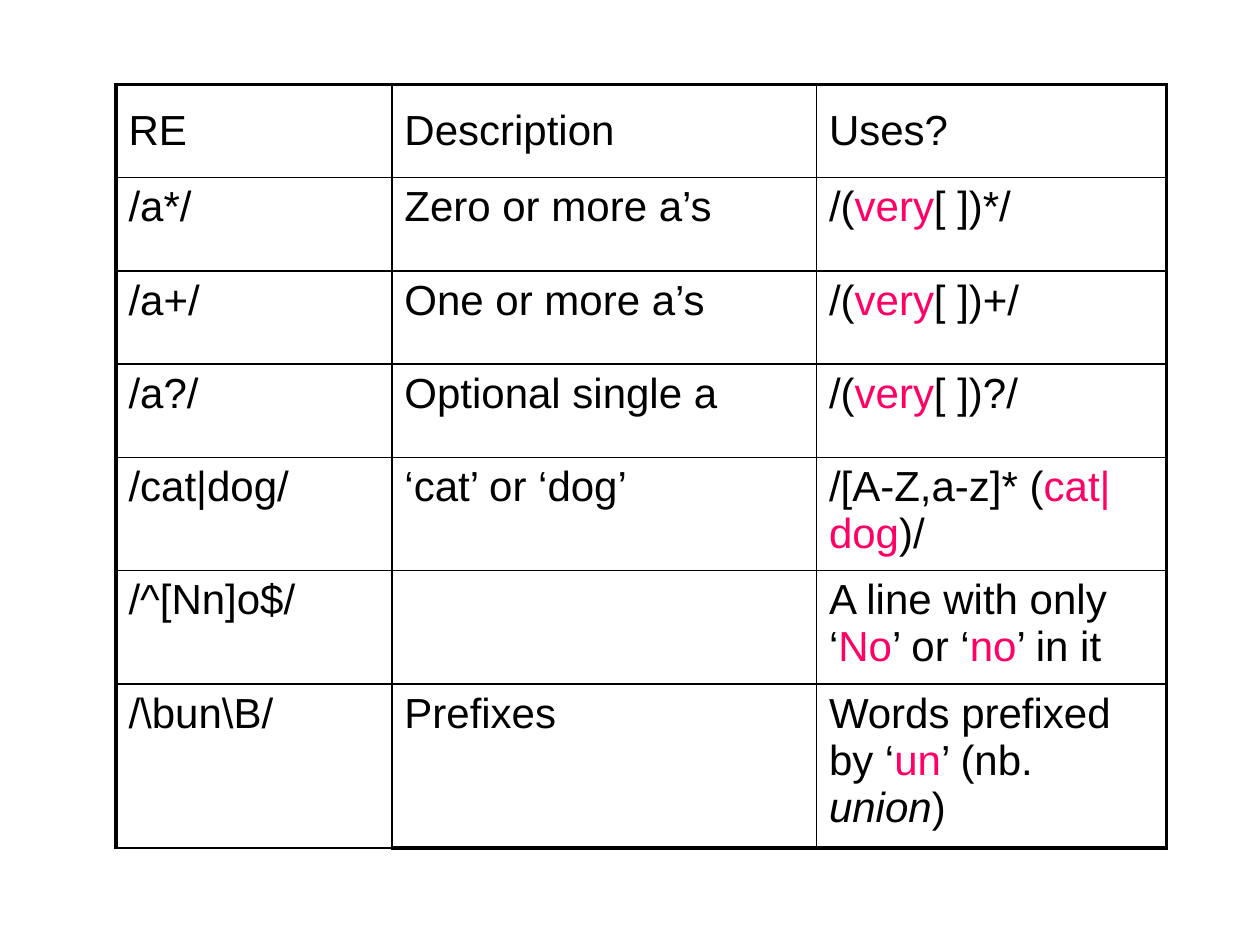
from lxml import etree
from pptx import Presentation
from pptx.dml.color import RGBColor
from pptx.enum.text import MSO_ANCHOR
from pptx.oxml.ns import qn
from pptx.util import Inches, Pt

MIDDLE, TOP = MSO_ANCHOR.MIDDLE, MSO_ANCHOR.TOP
COLORS = {"ink": "000000", "match": "FF0066"}
FONT, FONT_SIZE = "Arial", 24
THIN, THICK = 1, 2.25

# Each cell is a list of runs: (text, style), style being "", "match" or "italic".
ROWS = [
    ([("RE", "")], [("Description", "")], [("Uses?", "")]),
    ([("/a*/", "")], [("Zero or more a’s", "")],
     [("/(", ""), ("very", "match"), ("[ ])*/", "")]),
    ([("/a+/", "")], [("One or more a’s", "")],
     [("/(", ""), ("very", "match"), ("[ ])+/", "")]),
    ([("/a?/", "")], [("Optional single a", "")],
     [("/(", ""), ("very", "match"), ("[ ])?/", "")]),
    ([("/cat|dog/", "")], [("‘cat’ or ‘dog’", "")],
     [("/[A-Z,a-z]* (", ""), ("cat|dog", "match"), (")/", "")]),
    ([("/^[Nn]o$/", "")], [],
     [("A line with only ‘", ""), ("No", "match"), ("’ or ‘", ""),
      ("no", "match"), ("’ in it", "")]),
    ([("/\\bun\\B/", "")], [("Prefixes", "")],
     [("Words prefixed by ‘", ""), ("un", "match"), ("’ (nb. ", ""),
      ("union", "italic"), (")", "")]),
]
COLUMN_WIDTHS = [2.19, 3.37, 2.78]
ROW_HEIGHTS = [0.74] * 4 + [0.9] * 2 + [1.3]
LEFT, TABLE_TOP = 0.92, 0.67


def set_borders(cell, widths):
    """Draw solid borders; widths maps L, R, T and B to points, in that order."""
    properties = cell._tc.get_or_add_tcPr()
    for side, width in widths.items():
        line = etree.SubElement(properties, qn(f"a:ln{side}"), w=str(Pt(width)))
        fill = etree.SubElement(line, qn("a:solidFill"))
        etree.SubElement(fill, qn("a:srgbClr"), val=COLORS["ink"])


def write_runs(cell, runs):
    paragraph = cell.text_frame.paragraphs[0]
    paragraph.font.size = Pt(FONT_SIZE)
    for text, style in runs:
        run = paragraph.add_run()
        run.text = text
        run.font.name = FONT
        run.font.size = Pt(FONT_SIZE)
        run.font.italic = style == "italic"
        color = COLORS["match" if style == "match" else "ink"]
        run.font.color.rgb = RGBColor.from_string(color)


def add_regex_table(slide):
    table = slide.shapes.add_table(
        len(ROWS), len(COLUMN_WIDTHS), Inches(LEFT), Inches(TABLE_TOP),
        Inches(sum(COLUMN_WIDTHS)), Inches(sum(ROW_HEIGHTS))).table
    table.first_row = table.horz_banding = False
    for column, width in zip(table.columns, COLUMN_WIDTHS):
        column.width = Inches(width)
    for row, height in zip(table.rows, ROW_HEIGHTS):
        row.height = Inches(height)

    last_row, last_column = len(ROWS) - 1, len(COLUMN_WIDTHS) - 1
    for r, row in enumerate(ROWS):
        for c, runs in enumerate(row):
            cell = table.cell(r, c)
            set_borders(cell, {
                "L": THICK if c == 0 else THIN,
                "R": THICK if c == last_column else THIN,
                "T": THICK if r == 0 else THIN,
                "B": THICK if r == last_row and c > 0 else THIN,
            })
            cell.fill.background()
            cell.vertical_anchor = MIDDLE if r == 0 else TOP
            write_runs(cell, runs)


def main():
    prs = Presentation()
    prs.slide_width, prs.slide_height = Inches(10), Inches(7.5)
    add_regex_table(prs.slides.add_slide(prs.slide_layouts[6]))
    prs.save("out.pptx")


if __name__ == "__main__":
    main()
